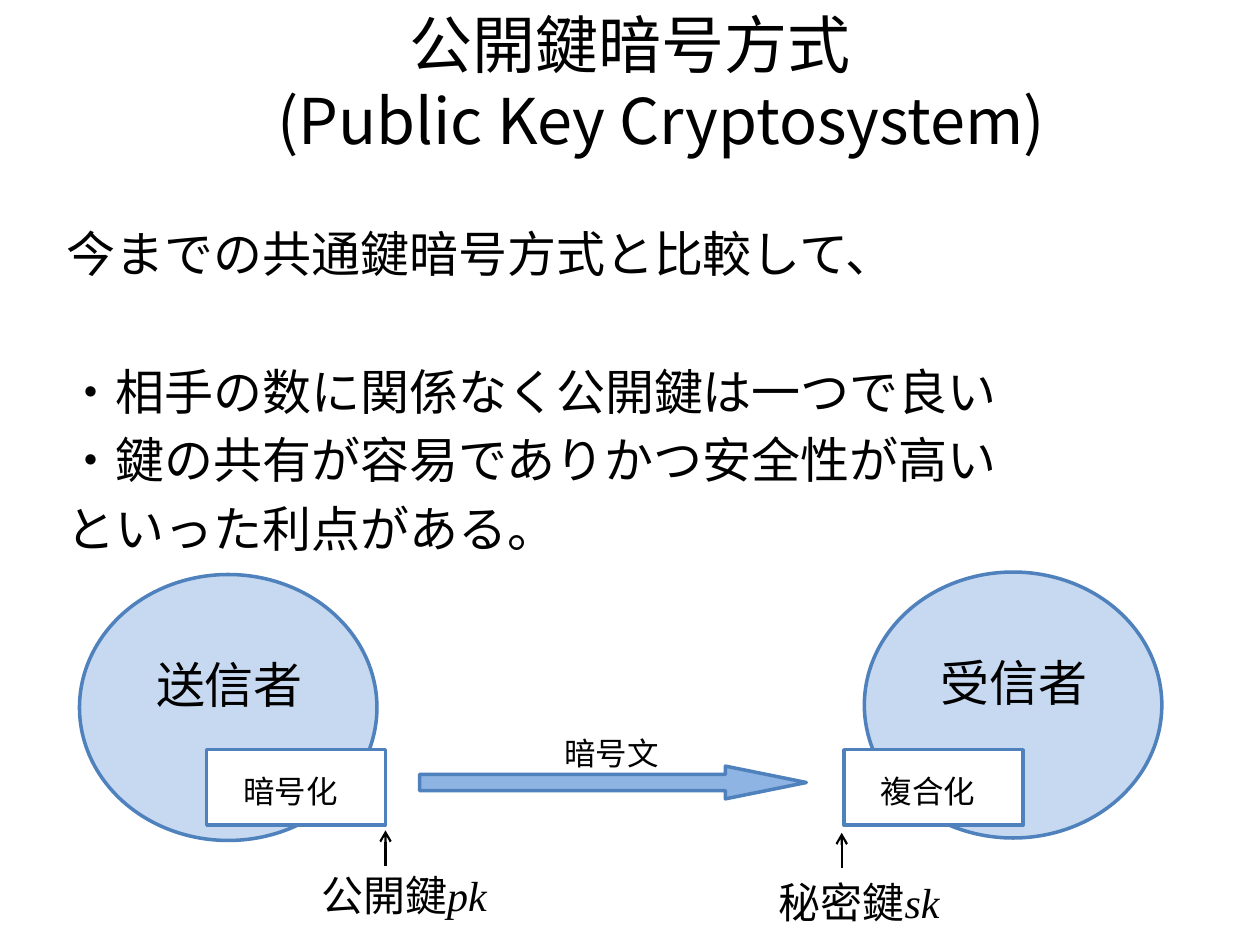
from typing import NamedTuple

from lxml.etree import SubElement
from pptx import Presentation
from pptx.dml.color import RGBColor
from pptx.enum.shapes import MSO_CONNECTOR, MSO_SHAPE
from pptx.enum.text import MSO_ANCHOR, MSO_AUTO_SIZE, PP_ALIGN
from pptx.oxml.ns import qn
from pptx.util import Pt

BLACK = RGBColor(0x00, 0x00, 0x00)
WHITE = RGBColor(0xFF, 0xFF, 0xFF)
PALE_BLUE = RGBColor(0x8E, 0xB4, 0xE3)
EDGE_BLUE = RGBColor(0x4F, 0x81, 0xBD)
GOTHIC = "Noto Sans CJK JP"
SERIF = "Times New Roman"
LABEL_LEADING = 1.32


class Box(NamedTuple):
    left: float
    top: float
    width: float
    height: float


class Party(NamedTuple):
    name: str
    circle: Box
    name_box: Box
    step: str
    step_frame: Box
    step_box: Box
    key: str
    symbol: str
    key_box: Box
    key_arrow_x: float
    key_arrow_top: float


PARTIES = [
    Party("送信者", Box(45.4, 328.3, 170, 152), Box(82.1, 367.2, 107.3, 41),
          "暗号化", Box(118.1, 428.4, 102.2, 43.2), Box(131.8, 435.6, 74.2, 28.8),
          "公開鍵", "pk", Box(176.4, 490.3, 139, 36), 220.3, 474.5),
    Party("受信者", Box(493.9, 326.9, 170, 152), Box(530.6, 365.8, 107.3, 41),
          "複合化", Box(482.4, 428.4, 102.2, 43.2), Box(496.1, 435.6, 74.2, 28.8),
          "秘密鍵", "sk", Box(437.8, 494.6, 132.5, 36), 481, 475.9),
]
ADVANTAGES = [
    "今までの共通鍵暗号方式と比較して、",
    "・相手の数に関係なく公開鍵は一つで良い",
    "・鍵の共有が容易でありかつ安全性が高い",
    "といった利点がある。",
]


def points(box: Box) -> list:
    return [Pt(value) for value in box]


def place(placeholder, box: Box) -> None:
    placeholder.left, placeholder.top, placeholder.width, placeholder.height = points(box)


def style_run(run, size: float, font: str = GOTHIC) -> None:
    run.font.size = Pt(size)
    run.font.name = font
    run.font.color.rgb = BLACK
    SubElement(run._r.get_or_add_rPr(), qn("a:ea")).set("typeface", font)


def add_outline(slide, preset, box: Box, fill: RGBColor, opacity: int = 100):
    outline = slide.shapes.add_shape(preset, *points(box))
    outline.shadow.inherit = False
    outline.fill.solid()
    outline.fill.fore_color.rgb = fill
    outline.line.color.rgb = EDGE_BLUE
    outline.line.width = Pt(2)
    if opacity < 100:
        color = outline._element.spPr.find(qn("a:solidFill"))[0]
        SubElement(color, qn("a:alpha")).set("val", str(opacity * 1000))
    return outline


def add_label(slide, text: str, box: Box, size: float, fill: RGBColor = None):
    label = slide.shapes.add_textbox(*points(box))
    if fill is not None:
        label.fill.solid()
        label.fill.fore_color.rgb = fill
    label.text_frame.word_wrap = True
    label.text_frame.text = text
    paragraph = label.text_frame.paragraphs[0]
    paragraph.line_spacing = Pt(size * LABEL_LEADING)
    style_run(paragraph.runs[0], size)
    return paragraph


def add_key_arrow(slide, x: float, top: float) -> None:
    arrow = slide.shapes.add_connector(
        MSO_CONNECTOR.STRAIGHT, Pt(x), Pt(top + 20.2), Pt(x), Pt(top))
    arrow.line.color.rgb = BLACK
    arrow.line.width = Pt(1.25)
    SubElement(arrow.line._get_or_add_ln(), qn("a:tailEnd")).set("type", "arrow")
    SubElement(arrow._element.spPr, qn("a:effectLst"))


def add_party(slide, party: Party) -> None:
    add_outline(slide, MSO_SHAPE.OVAL, party.circle, PALE_BLUE, 50)
    add_label(slide, party.name, party.name_box, 28)
    add_outline(slide, MSO_SHAPE.RECTANGLE, party.step_frame, WHITE)
    add_label(slide, party.step, party.step_box, 18, WHITE)
    add_key_arrow(slide, party.key_arrow_x, party.key_arrow_top)
    key_line = add_label(slide, party.key, party.key_box, 24)
    symbol = key_line.add_run()
    symbol.text = party.symbol
    style_run(symbol, 24, SERIF)
    symbol.font.italic = True


def fill_title(title) -> None:
    place(title, Box(36, 21.6, 648, 90))
    frame = title.text_frame
    frame.text = "公開鍵暗号方式\v　(Public Key Cryptosystem)"
    frame.auto_size = MSO_AUTO_SIZE.NONE
    frame.vertical_anchor = MSO_ANCHOR.MIDDLE
    frame.margin_top, frame.margin_bottom = Pt(0), Pt(40)
    heading = frame.paragraphs[0]
    heading.alignment = PP_ALIGN.CENTER
    heading.line_spacing = Pt(43)
    for run in heading.runs:
        style_run(run, 36)


def fill_body(body) -> None:
    place(body, Box(31, 122.4, 648, 230.4))
    frame = body.text_frame
    frame.text = "\n".join(ADVANTAGES)
    frame.auto_size = MSO_AUTO_SIZE.NONE
    frame.margin_top = Pt(5)
    # The list is set apart from its introduction by one line
    for paragraph, gap in zip(frame.paragraphs, (0, 44.8, 5.2, 5.2)):
        paragraph.line_spacing = Pt(34)
        paragraph.space_before = Pt(gap)
        properties = paragraph._p.get_or_add_pPr()
        properties.set("marL", "0")
        properties.set("indent", "0")
        SubElement(properties, qn("a:buNone"))
        style_run(paragraph.runs[0], 28)


def main() -> None:
    deck = Presentation()
    deck.slide_width, deck.slide_height = Pt(720), Pt(540)
    slide = deck.slides.add_slide(deck.slide_layouts[1])

    # Title and advantages
    fill_title(slide.shapes.title)
    fill_body(slide.placeholders[1])

    # Sender and receiver with their keys
    for party in PARTIES:
        add_party(slide, party)

    # Ciphertext passing between them
    add_label(slide, "暗号文", Box(315.4, 414, 74.2, 28.8), 18)
    transfer = add_outline(
        slide, MSO_SHAPE.RIGHT_ARROW, Box(239.8, 437.8, 221, 18.7), PALE_BLUE)
    transfer.adjustments[0] = 0.5
    transfer.adjustments[1] = 2.47

    deck.save("out.pptx")


if __name__ == "__main__":
    main()
